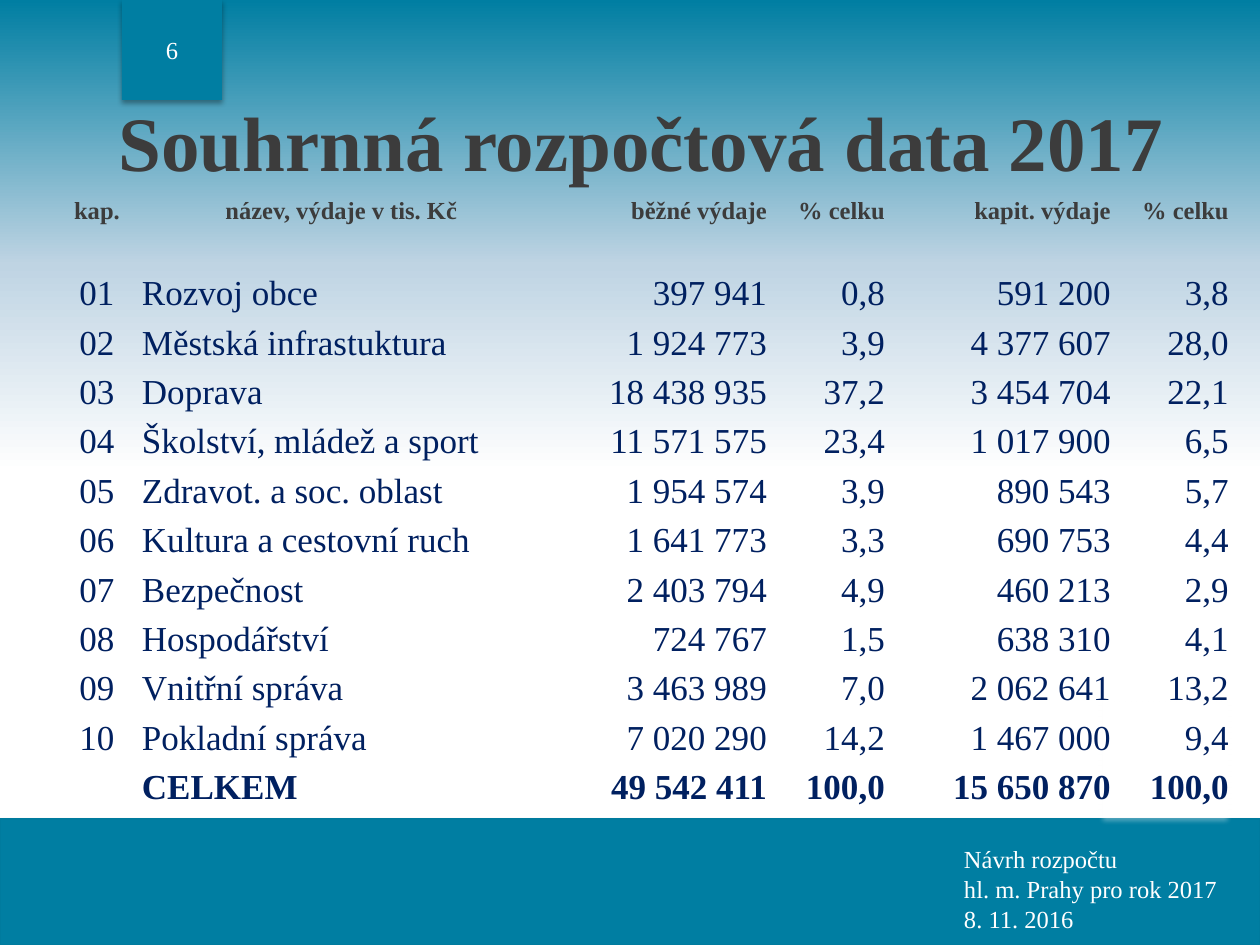
from lxml.etree import SubElement
from pptx import Presentation
from pptx.dml.color import RGBColor
from pptx.enum.shapes import MSO_SHAPE
from pptx.enum.text import MSO_ANCHOR, PP_ALIGN
from pptx.oxml.ns import qn
from pptx.util import Emu, Pt

EMU_PER_PX = 914400 / 126
FONT = "Times New Roman"
TEAL, WHITE, GREY, NAVY = "007EA2", "FFFFFF", "3C3C3C", "002060"
NO_TABLE_STYLE = "{2D5ABB26-0587-4C30-8999-92F81FD0307C}"
LEFT, CENTER, RIGHT = PP_ALIGN.LEFT, PP_ALIGN.CENTER, PP_ALIGN.RIGHT

TITLE = "Souhrnná rozpočtová data 2017"
HEADINGS = ["kap.", "název, výdaje v tis. Kč", "běžné výdaje", "% celku", "kapit. výdaje", "% celku"]
CHAPTERS = [
    ["01", "Rozvoj obce", "397 941", "0,8", "591 200", "3,8"],
    ["02", "Městská infrastuktura", "1 924 773", "3,9", "4 377 607", "28,0"],
    ["03", "Doprava", "18 438 935", "37,2", "3 454 704", "22,1"],
    ["04", "Školství, mládež a sport", "11 571 575", "23,4", "1 017 900", "6,5"],
    ["05", "Zdravot. a soc. oblast", "1 954 574", "3,9", "890 543", "5,7"],
    ["06", "Kultura a cestovní ruch", "1 641 773", "3,3", "690 753", "4,4"],
    ["07", "Bezpečnost", "2 403 794", "4,9", "460 213", "2,9"],
    ["08", "Hospodářství", "724 767", "1,5", "638 310", "4,1"],
    ["09", "Vnitřní správa", "3 463 989", "7,0", "2 062 641", "13,2"],
    ["10", "Pokladní správa", "7 020 290", "14,2", "1 467 000", "9,4"],
]
TOTAL = ["", "CELKEM", "49 542 411", "100,0", "15 650 870", "100,0"]
COLUMN_WIDTHS = [88, 401, 226, 118, 226, 118]
TITLE_HEIGHT, HEADING_HEIGHT = 117, 37


def px(length):
    return Emu(round(length * EMU_PER_PX))


def color(value):
    return RGBColor.from_string(value)


def add_color(parent, value, alpha):
    node = SubElement(parent, qn("a:srgbClr"), val=value)
    SubElement(node, qn("a:alpha"), val=str(alpha * 1000))


def write(frame, *texts, size=14, fill=WHITE, bold=False, align=LEFT, spacing=None):
    """Write one paragraph per text; a vertical tab breaks the line."""
    for index, text in enumerate(texts):
        para = frame.add_paragraph() if index else frame.paragraphs[0]
        para.text = text
        para.alignment = align
        if spacing:
            para.line_spacing = Pt(spacing)
        for span in para.runs:
            span.font.name = FONT
            span.font.size = Pt(size)
            span.font.bold = bold
            span.font.color.rgb = color(fill)


def set_background(page):
    fill = page.background.fill
    fill.gradient()
    fill.gradient_angle = 270
    stops = fill.gradient_stops
    stop_list = stops[0]._gs.getparent()
    for stop in list(stop_list):
        stop_list.remove(stop)
    for place, value, alpha in [(0, TEAL, 92), (28, "BFD4E3", 85), (50, WHITE, 100)]:
        add_color(SubElement(stop_list, qn("a:gs"), pos=str(place * 1000)), value, alpha)


def add_block(page, box, fill, line=None, shadow="000000"):
    """Add a rectangle with a soft shadow below it."""
    block = page.shapes.add_shape(MSO_SHAPE.RECTANGLE, *map(px, box))
    block.fill.solid()
    block.fill.fore_color.rgb = color(fill)
    if line:
        block.line.color.rgb = color(line)
        block.line.width = Pt(0.75)
    else:
        block.line.fill.background()
    block.shadow.inherit = False
    effects = block._element.spPr.find(qn("a:effectLst"))
    outer = SubElement(effects, qn("a:outerShdw"), blurRad=str(Pt(3.1)), dist=str(Pt(1.8)),
                       dir="5400000", rotWithShape="0")
    add_color(outer, shadow, 35)


def add_text(page, box, *texts, anchor=MSO_ANCHOR.TOP, **style):
    frame = page.shapes.add_textbox(*map(px, box)).text_frame
    frame.word_wrap = True
    frame.vertical_anchor = anchor
    frame.margin_left = frame.margin_right = frame.margin_top = frame.margin_bottom = 0
    write(frame, *texts, **style)


def fill_row(table, row, texts, aligns, **style):
    for column, (text, align) in enumerate(zip(texts, aligns)):
        if text:
            write(table.cell(row, column).text_frame, text, align=align, **style)


def add_budget_table(page, box):
    left, top, width, height = box
    row_count = len(CHAPTERS) + 4
    table = page.shapes.add_table(row_count, len(COLUMN_WIDTHS), *map(px, box)).table
    table.first_row = table.horz_banding = False
    table._tbl.tblPr.find(qn("a:tableStyleId")).text = NO_TABLE_STYLE
    for column, column_width in zip(table.columns, COLUMN_WIDTHS):
        column.width = px(column_width)
    fixed = [TITLE_HEIGHT, HEADING_HEIGHT, HEADING_HEIGHT]
    data_count = row_count - len(fixed)
    heights = fixed + [(height - sum(fixed)) / data_count] * data_count
    for row, row_height in zip(table.rows, heights):
        row.height = px(row_height)
    for cell in table.iter_cells():
        cell.fill.background()
        cell.vertical_anchor = MSO_ANCHOR.BOTTOM
        cell.margin_left = cell.margin_right = cell.margin_top = px(1)
        cell.margin_bottom = 0

    numbers = [RIGHT] * 4
    table.cell(0, 0).merge(table.cell(0, len(COLUMN_WIDTHS) - 1))
    fill_row(table, 0, [TITLE], [CENTER], size=44, fill=GREY, bold=True)
    fill_row(table, 1, HEADINGS, [CENTER, CENTER] + numbers, fill=GREY, bold=True)
    for row, texts in enumerate(CHAPTERS + [TOTAL], start=len(fixed)):
        fill_row(table, row, texts, [CENTER, LEFT] + numbers,
                 size=20, fill=NAVY, bold=texts is TOTAL)


def build_budget_slide(deck):
    page = deck.slides.add_slide(deck.slide_layouts[6])
    set_background(page)
    number_box = (122, 0, 100, 100)
    add_block(page, number_box, TEAL)
    add_block(page, (0, 819, 1260, 126), TEAL, line="007B9E")
    add_text(page, number_box, "6", anchor=MSO_ANCHOR.MIDDLE, align=CENTER)
    add_text(page, (964, 844, 296, 101), "Návrh rozpočtu\vhl. m. Prahy pro rok 2017",
             "8. 11. 2016", spacing=17)
    add_block(page, (1104, 703, 123, 113), WHITE, line=WHITE, shadow=WHITE)
    add_budget_table(page, (53, 71, 1177, 735))


def main():
    deck = Presentation()
    deck.slide_width, deck.slide_height = px(1260), px(945)
    build_budget_slide(deck)
    deck.save("out.pptx")


if __name__ == "__main__":
    main()
